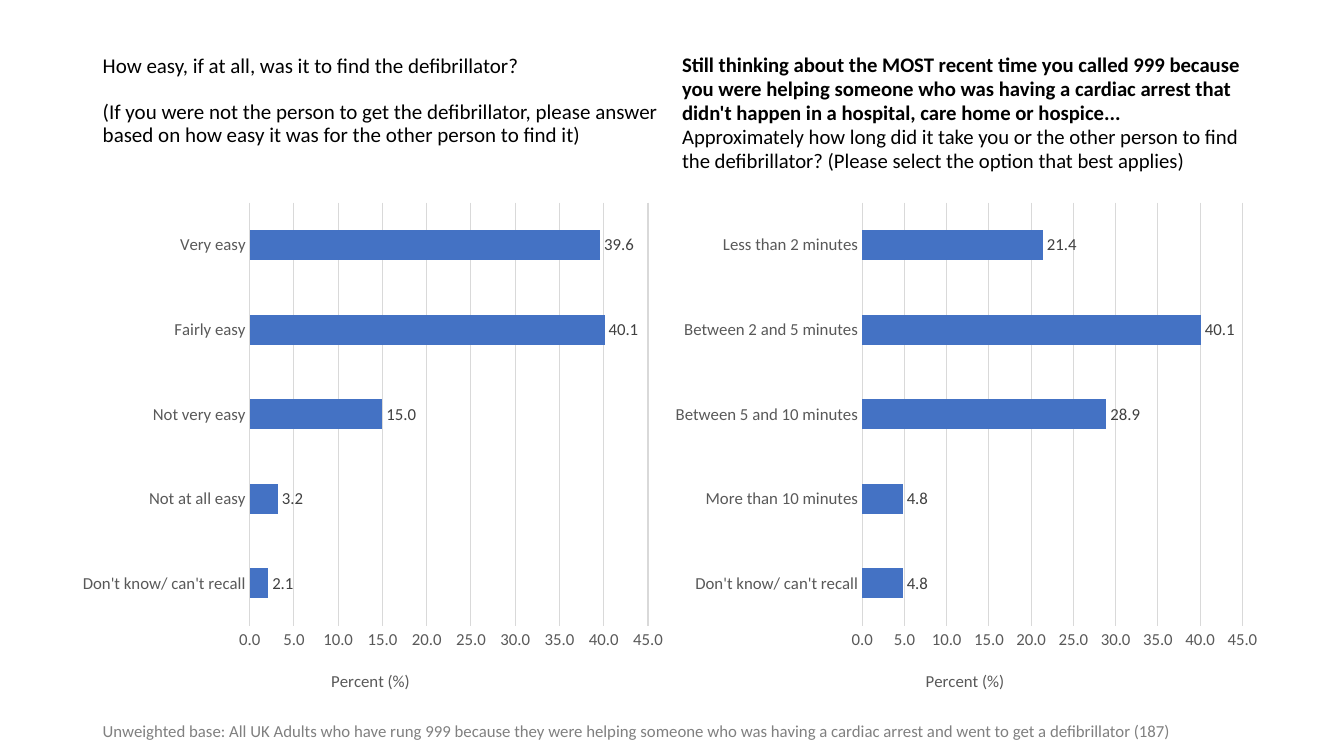
from pptx import Presentation
from pptx.chart.data import CategoryChartData
from pptx.dml.color import RGBColor
from pptx.enum.chart import XL_CHART_TYPE as ChartType, XL_LABEL_POSITION as LabelPosition, XL_TICK_MARK as TickMark
from pptx.oxml import parse_xml
from pptx.oxml.ns import nsdecls, qn
from pptx.util import Cm, Pt


def color(value):
    return RGBColor.from_string(value)


def set_layout(element, index, **measures):
    existing = element.find(qn("c:layout"))
    if existing is not None:
        element.remove(existing)
    target = '<c:layoutTarget val="inner"/>' if "w" in measures else ""
    modes = "".join(f'<c:{key}Mode val="edge"/>' for key in measures if key in "xy")
    values = "".join(f'<c:{key} val="{value}"/>' for key, value in measures.items())
    element.insert(index, parse_xml(
        f'<c:layout {nsdecls("c")}><c:manualLayout>{target}{modes}{values}</c:manualLayout></c:layout>'))


class SurveySlide:
    font_name = "Calibri"
    bar = "4472C4"
    grid = "D9D9D9"
    axis_text = "595959"
    label_text = "404040"

    def __init__(self, presentation):
        self.slide = presentation.slides.add_slide(presentation.slide_layouts[6])

    def style(self, font, size, text_color, bold=False):
        font.name = self.font_name
        font.size = Pt(size)
        font.bold = bold
        font.color.rgb = color(text_color)

    def text(self, left, top, width, height, paragraphs, size, text_color="000000", spacing=1.0, gap=0):
        frame = self.slide.shapes.add_textbox(Cm(left), Cm(top), Cm(width), Cm(height)).text_frame
        frame.word_wrap = True
        for index, (words, bold) in enumerate(paragraphs):
            paragraph = frame.add_paragraph() if index else frame.paragraphs[0]
            paragraph.text = words
            paragraph.line_spacing = spacing
            if index:
                paragraph.space_before = Pt(gap)
            self.style(paragraph.font, size, text_color, bold)

    def bar_chart(self, left, answers, plot_left, plot_width):
        data = CategoryChartData(number_format="0.0")
        data.categories = list(answers)[::-1]
        data.add_series("Series 1", list(answers.values())[::-1])
        chart = self.slide.shapes.add_chart(
            ChartType.BAR_CLUSTERED, Cm(left), Cm(4.85), Cm(15.21), Cm(13), data).chart
        chart.has_legend = False
        chart.has_title = False
        self.style(chart.font, 12, "000000")

        for axis in (chart.category_axis, chart.value_axis):
            axis.major_tick_mark = axis.minor_tick_mark = TickMark.NONE
            self.style(axis.tick_labels.font, 12, self.axis_text)
        category_line = chart.category_axis.format.line
        category_line.color.rgb = color(self.grid)
        category_line.width = Pt(0.75)

        axis = chart.value_axis
        axis.minimum_scale, axis.maximum_scale, axis.major_unit = 0, 45, 5
        axis.tick_labels.number_format = "0.0"
        axis.tick_labels.number_format_is_linked = False
        axis.format.line.fill.background()
        axis.major_gridlines.format.line.color.rgb = color(self.grid)
        axis.major_gridlines.format.line.width = Pt(0.75)
        title = axis.axis_title
        title.text_frame.text = "Percent (%)"
        self.style(title.text_frame.paragraphs[0].font, 12, self.axis_text)
        set_layout(title._element, 1, x=0.43, y=0.92)

        plot = chart.plots[0]
        plot.gap_width = 182
        plot.vary_by_categories = False
        fill = plot.series[0].format.fill
        fill.solid()
        fill.fore_color.rgb = color(self.bar)
        plot.has_data_labels = True
        labels = plot.data_labels
        labels.show_value = True
        labels.number_format = "0.0"
        labels.number_format_is_linked = False
        labels.position = LabelPosition.OUTSIDE_END
        self.style(labels.font, 12, self.label_text)
        set_layout(chart._chartSpace.chart.plotArea, 0, x=plot_left, y=0.02, w=plot_width, h=0.82)


def main():
    presentation = Presentation()
    presentation.slide_width, presentation.slide_height = Cm(33.87), Cm(19.05)
    survey = SurveySlide(presentation)

    survey.text(2.34, 1.28, 14.6, 2.9, [
        ("How easy, if at all, was it to find the defibrillator?", False),
        ("(If you were not the person to get the defibrillator, please answer based on how easy "
         "it was for the other person to find it)", False),
    ], 15, spacing=0.9, gap=16.5)
    survey.text(16.94, 1.22, 14.6, 3.3, [
        ("Still thinking about the MOST recent time you called 999 because you were helping someone "
         "who was having a cardiac arrest that didn't happen in a hospital, care home or hospice...", True),
        ("Approximately how long did it take you or the other person to find the defibrillator? "
         "(Please select the option that best applies)", False),
    ], 14.8, spacing=0.97)
    survey.text(2.34, 18.03, 30.56, 0.76, [
        ("Unweighted base: All UK Adults who have rung 999 because they were helping someone "
         "who was having a cardiac arrest and went to get a defibrillator (187)", False),
    ], 12, "808080")

    survey.bar_chart(1.73, {
        "Very easy": 39.6,
        "Fairly easy": 40.1,
        "Not very easy": 15.0,
        "Not at all easy": 3.2,
        "Don't know/ can't recall": 2.1,
    }, 0.3, 0.66)
    survey.bar_chart(16.71, {
        "Less than 2 minutes": 21.4,
        "Between 2 and 5 minutes": 40.1,
        "Between 5 and 10 minutes": 28.9,
        "More than 10 minutes": 4.8,
        "Don't know/ can't recall": 4.8,
    }, 0.33, 0.63)

    presentation.save("out.pptx")


if __name__ == "__main__":
    main()
